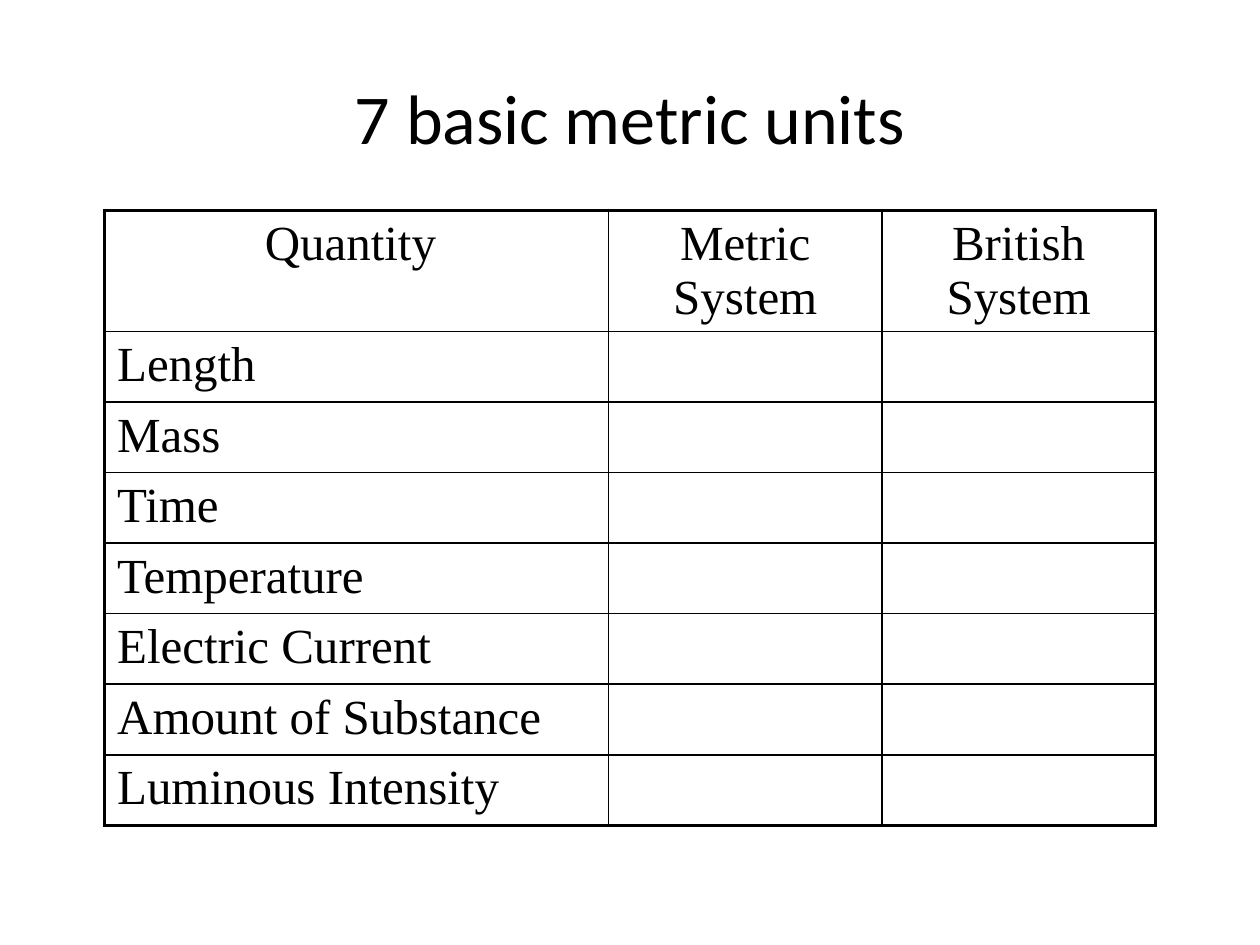
from pptx import Presentation
from pptx import util as u
from pptx.dml import color
from pptx.enum import text
from pptx.oxml import ns
from lxml import etree

HUES = {"ink": "000000", "page": "FFFFFF"}
THIN, THICK = 1, 2.25


class Deck:
    def __init__(self, wide, high):
        self.prs = Presentation()
        self.prs.slide_width = u.Inches(wide)
        self.prs.slide_height = u.Inches(high)
        self.slide = self.prs.slides.add_slide(self.prs.slide_layouts[5])
        fill = self.slide.background.fill
        fill.solid()
        fill.fore_color.rgb = color.RGBColor.from_string(HUES["page"])

    def style(self, para, align, **form):
        para.alignment = align
        for key, val in form.items():
            setattr(para.font, key, val)
        para.font.color.rgb = color.RGBColor.from_string(HUES["ink"])

    def title(self, words, box):
        shape = self.slide.shapes.title
        for key, val in zip(("left", "top", "width", "height"), box):
            setattr(shape, key, u.Inches(val))
        frame = shape.text_frame
        frame.text = words
        frame.vertical_anchor = text.MSO_ANCHOR.MIDDLE
        self.style(frame.paragraphs[0], text.PP_ALIGN.CENTER,
                   name="Calibri", size=u.Pt(40))

    def border(self, cell, sides):
        props = cell._tc.get_or_add_tcPr()
        for side, width in sides.items():
            line = etree.SubElement(props, ns.qn("a:ln" + side),
                                    w=str(u.Pt(width)))
            fill = etree.SubElement(line, ns.qn("a:solidFill"))
            etree.SubElement(fill, ns.qn("a:srgbClr"), val=HUES["ink"])

    def table(self, head, names, left, top, cols, high):
        rows = [head] + [[name] + [""] * (len(head) - 1) for name in names]
        last_row, last_col = len(rows) - 1, len(head) - 1
        grid = self.slide.shapes.add_table(
            len(rows), len(head), u.Inches(left), u.Inches(top),
            u.Inches(sum(cols)), u.Inches(high * len(rows))).table
        for col, width in zip(grid.columns, cols):
            col.width = u.Inches(width)
        for r, row in enumerate(rows):
            grid.rows[r].height = u.Inches(high)
            for c, words in enumerate(row):
                cell = grid.cell(r, c)
                edges = {"L": c == 0, "R": c == last_col,
                         "T": r == 0, "B": r == last_row}
                self.border(cell, {side: THICK if outer else THIN
                                   for side, outer in edges.items()})
                cell.fill.background()
                cell.text = words
                align = text.PP_ALIGN.LEFT if r else text.PP_ALIGN.CENTER
                self.style(cell.text_frame.paragraphs[0], align, bold=False,
                           name="Times New Roman", size=u.Pt(28))


def main():
    deck = Deck(10, 7.5)
    deck.title("7 basic metric units", (0.5, 0.3, 9, 1.25))
    deck.table(["Quantity ", "Metric System", "British System"],
               ["Length", "Mass", "Time", "Temperature", "Electric Current",
                "Amount of Substance", "Luminous Intensity"],
               0.83, 1.67, (4, 2.17, 2.17), 0.56)
    deck.prs.save("out.pptx")


if __name__ == "__main__":
    main()
